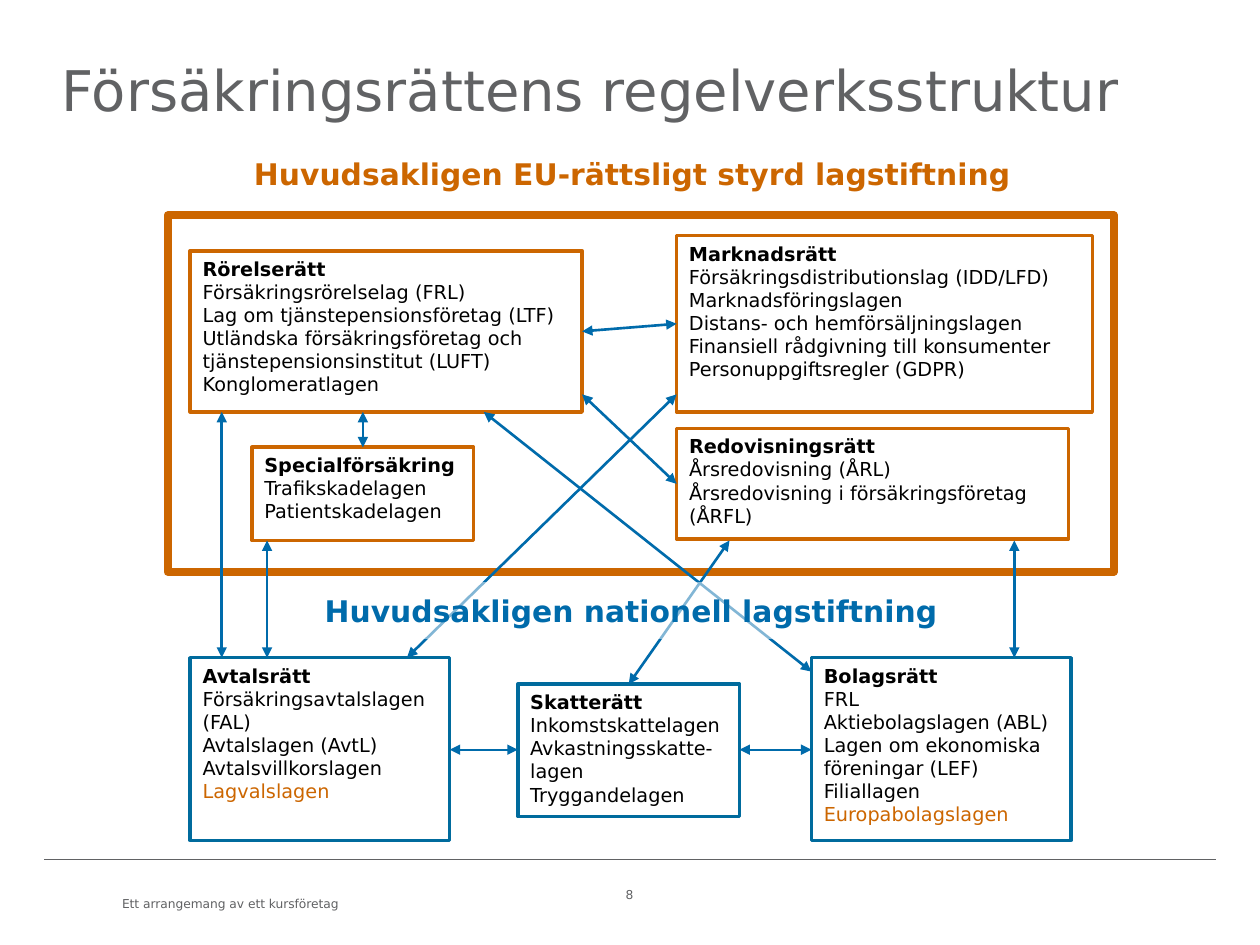
from pptx import Presentation
from pptx.dml.color import RGBColor
from pptx.enum.shapes import MSO_CONNECTOR, MSO_SHAPE
from pptx.enum.text import MSO_ANCHOR, MSO_AUTO_SIZE, PP_ALIGN
from pptx.oxml.ns import qn
from pptx.util import Inches, Pt
from lxml.etree import SubElement

FONT = "DejaVu Sans"
COLORS = {
    "gray": "616264",
    "orange": "CC6600",
    "blue": "006BAB",
    "border_blue": "006B9D",
    "black": "000000",
    "white": "FFFFFF",
}

# Law boxes: place, border colour, heading, laws, and closing law in orange
EU_BOXES = [
    ((1.51, 1.99, 3.11, 1.28), "orange", "Rörelserätt",
     ["Försäkringsrörelselag (FRL)", "Lag om tjänstepensionsföretag (LTF)",
      "Utländska försäkringsföretag och tjänstepensionsinstitut (LUFT)",
      "Konglomeratlagen"], None),
    ((5.37, 1.87, 3.3, 1.4), "orange", "Marknadsrätt",
     ["Försäkringsdistributionslag (IDD/LFD)", "Marknadsföringslagen",
      "Distans- och hemförsäljningslagen",
      "Finansiell rådgivning till konsumenter",
      "Personuppgiftsregler (GDPR)"], None),
    ((2, 3.55, 1.76, 0.74), "orange", "Specialförsäkring",
     ["Trafikskadelagen", "Patientskadelagen"], None),
    ((5.37, 3.4, 3.11, 0.88), "orange", "Redovisningsrätt",
     ["Årsredovisning (ÅRL)", "Årsredovisning i försäkringsföretag (ÅRFL)"], None),
]
NATIONAL_BOXES = [
    ((1.51, 5.22, 2.06, 1.45), "border_blue", "Avtalsrätt",
     ["Försäkringsavtalslagen (FAL)", "Avtalslagen (AvtL)",
      "Avtalsvillkorslagen"], "Lagvalslagen"),
    ((6.44, 5.22, 2.06, 1.45), "border_blue", "Bolagsrätt",
     ["FRL", "Aktiebolagslagen (ABL)", "Lagen om ekonomiska föreningar (LEF)",
      "Filiallagen"], "Europabolagslagen"),
    ((4.11, 5.43, 1.76, 1.05), "border_blue", "Skatterätt",
     ["Inkomstskattelagen", "Avkastningsskatte-lagen", "Tryggandelagen"], None),
]

# Arrows: start, end, width in points
ARROWS = [
    ((3.57, 5.95), (4.11, 5.95), 1),
    ((6.44, 5.95), (5.87, 5.95), 1),
    ((2.12, 5.22), (2.12, 4.29), 1.5),
    ((2.88, 3.55), (2.88, 3.27), 1.5),
    ((1.76, 5.22), (1.76, 3.27), 1.5),
    ((4.62, 2.63), (5.37, 2.57), 1.5),
    ((3.23, 5.22), (5.37, 3.13), 1.5),
    ((4.62, 3.13), (5.37, 3.84), 1.5),
    ((3.84, 3.27), (6.44, 5.33), 1.5),
    ((4.99, 5.43), (5.79, 4.29), 1.5),
]
FRONT_ARROW = ((8.05, 5.22), (8.05, 4.29), 1.5)


def rgb(color):
    return RGBColor.from_string(COLORS[color])


def add_run(paragraph, text, size, color, bold=False):
    run = paragraph.add_run()
    run.text = text
    run.font.name = FONT
    run.font.size = Pt(size)
    run.font.bold = bold
    run.font.color.rgb = rgb(color)


def add_title(slide, text):
    title = slide.shapes.title
    title.left, title.top = Inches(0.49), Inches(0.4)
    title.width, title.height = Inches(9), Inches(0.85)
    frame = title.text_frame
    frame.auto_size = MSO_AUTO_SIZE.NONE
    frame.word_wrap = True
    frame.vertical_anchor = MSO_ANCHOR.TOP
    frame.margin_left = frame.margin_right = frame.margin_bottom = 0
    frame.margin_top = Inches(0.04)
    paragraph = frame.paragraphs[0]
    paragraph.alignment = PP_ALIGN.LEFT
    add_run(paragraph, text, 32, "gray")


def add_label(slide, place, text, size, color, bold=False,
              alignment=PP_ALIGN.CENTER, line_spacing=None):
    label = slide.shapes.add_textbox(*map(Inches, place))
    label.text_frame.word_wrap = True
    paragraph = label.text_frame.paragraphs[0]
    paragraph.alignment = alignment
    paragraph.line_spacing = line_spacing
    add_run(paragraph, text, size, color, bold)
    return label


def add_frame(slide, place, color, width):
    shape = slide.shapes.add_shape(MSO_SHAPE.RECTANGLE, *map(Inches, place))
    shape.shadow.inherit = False
    shape.fill.background()
    shape.line.color.rgb = rgb(color)
    shape.line.width = Pt(width)
    return shape


def add_law_box(slide, place, border, heading, laws, orange_law):
    frame = add_frame(slide, place, border, 2).text_frame
    frame.word_wrap = True
    frame.vertical_anchor = MSO_ANCHOR.TOP
    lines = [(heading, "black", True)] + [(law, "black", False) for law in laws]
    if orange_law:
        lines.append((orange_law, "orange", False))
    for index, (text, color, bold) in enumerate(lines):
        paragraph = frame.add_paragraph() if index else frame.paragraphs[0]
        paragraph.alignment = PP_ALIGN.LEFT
        add_run(paragraph, text, 11, color, bold)


def add_line(slide, start, end, width, color="blue", arrows=True):
    points = map(Inches, (*start, *end))
    connector = slide.shapes.add_connector(MSO_CONNECTOR.STRAIGHT, *points)
    connector.line.color.rgb = rgb(color)
    connector.line.width = Pt(width)
    if arrows:
        line = connector.line._get_or_add_ln()
        for tag in ("a:headEnd", "a:tailEnd"):
            SubElement(line, qn(tag), type="triangle")
    SubElement(connector._element.spPr, qn("a:effectLst"))


def add_veiled_heading(slide, place, text):
    label = add_label(slide, place, text, 17, "blue", True, line_spacing=Pt(20))
    label.text_frame.vertical_anchor = MSO_ANCHOR.MIDDLE
    label.fill.solid()
    label.fill.fore_color.rgb = rgb("white")
    fill_color = label._element.spPr.find(".//" + qn("a:srgbClr"))
    SubElement(fill_color, qn("a:alpha"), val="51000")


def main():
    presentation = Presentation()
    presentation.slide_width = Inches(10)
    presentation.slide_height = Inches(7.5)
    slide = presentation.slides.add_slide(presentation.slide_layouts[5])

    # Footer
    add_line(slide, (0.35, 6.82), (9.65, 6.82), 0.75, "gray", arrows=False)
    add_label(slide, (0.87, 7.08, 2.12, 0.2), "Ett arrangemang av ett kursföretag",
              7, "gray", alignment=PP_ALIGN.LEFT, line_spacing=0.85)
    add_label(slide, (4.3, 6.99, 1.39, 0.28), "8", 7, "gray")

    # Title and heading of the EU part
    add_title(slide, "Försäkringsrättens regelverksstruktur")
    add_label(slide, (1.33, 1.19, 7.38, 0.54),
              "Huvudsakligen EU-rättsligt styrd lagstiftning",
              17, "orange", True, line_spacing=Pt(20))

    # Law boxes, with a thick frame around the EU part
    for box in EU_BOXES:
        add_law_box(slide, *box)
    add_frame(slide, (1.33, 1.71, 7.51, 2.83), "orange", 4.5)
    for box in NATIONAL_BOXES:
        add_law_box(slide, *box)

    # Arrows, most of them behind the heading of the national part
    for arrow in ARROWS:
        add_line(slide, *arrow)
    add_veiled_heading(slide, (2.22, 4.62, 5.58, 0.45),
                       "Huvudsakligen nationell lagstiftning")
    add_line(slide, *FRONT_ARROW)

    presentation.save("out.pptx")


if __name__ == "__main__":
    main()
